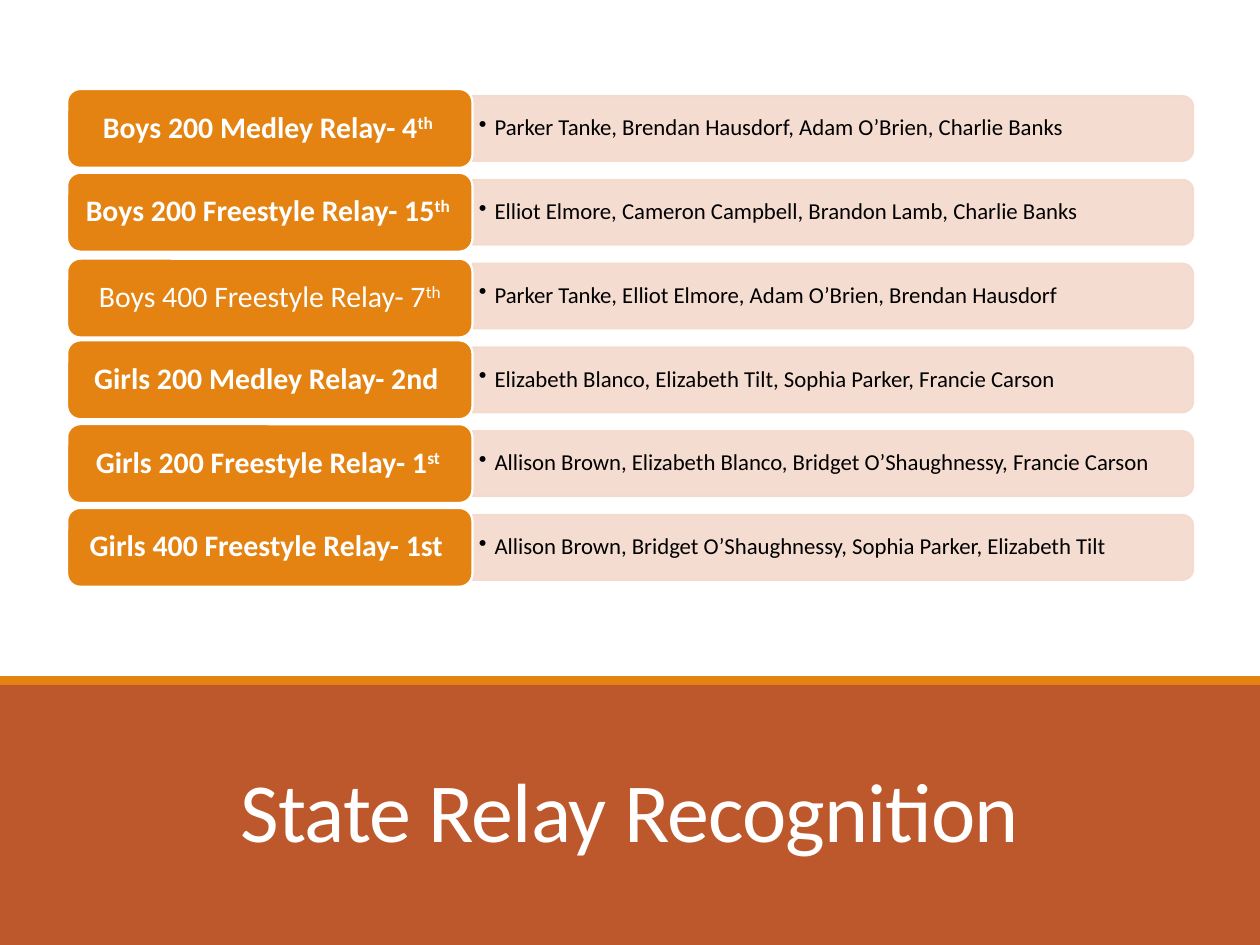
from dataclasses import dataclass

from lxml.etree import SubElement
from pptx import Presentation
from pptx.dml.color import RGBColor
from pptx.enum.shapes import MSO_SHAPE
from pptx.enum.text import MSO_ANCHOR, PP_ALIGN
from pptx.oxml.ns import qn
from pptx.util import Pt


@dataclass(frozen=True)
class Theme:
    font: str = "Calibri"
    white: str = "FFFFFF"
    black: str = "000000"
    rust: str = "BD582C"
    orange: str = "E48312"
    blush: str = "F5D9CC"
    title_size: float = 48
    label_size: float = 17
    names_size: float = 13
    outline: float = 1.25


class SlideBuilder:
    def __init__(self, slide, theme):
        self.s = slide
        self.theme = theme

    def box(self, kind, x, y, w, h, fill, line=None):
        sp = self.s.shapes.add_shape(kind, Pt(x), Pt(y), Pt(w), Pt(h))
        sp.shadow.inherit = False
        sp.fill.solid()
        sp.fill.fore_color.rgb = RGBColor.from_string(fill)
        if line:
            sp.line.color.rgb = RGBColor.from_string(line)
            sp.line.width = Pt(self.theme.outline)
        else:
            sp.line.fill.background()
        return sp

    def frame(self, sp, mx, my, anchor=MSO_ANCHOR.MIDDLE):
        tf = sp.text_frame
        tf.word_wrap = True
        tf.vertical_anchor = anchor
        tf.margin_left = tf.margin_right = Pt(mx)
        tf.margin_top = tf.margin_bottom = Pt(my)
        return tf

    def style(self, r, size, color, bold=False):
        r.font.name = self.theme.font
        r.font.size = Pt(size)
        r.font.bold = bold
        r.font.color.rgb = RGBColor.from_string(color)

    def title(self, text, x, y, w, h):
        sp = self.s.shapes.add_textbox(Pt(x), Pt(y), Pt(w), Pt(h))
        p = self.frame(sp, 7.2, 3.6, MSO_ANCHOR.BOTTOM).paragraphs[0]
        p.text = text
        p.alignment = PP_ALIGN.CENTER
        p.line_spacing = 0.85
        r = p.runs[0]
        self.style(r, self.theme.title_size, self.theme.white)
        r.font._element.set("spc", "-50")

    def bar(self, x, center_y, w, h):
        color = self.theme.blush
        sp = self.box(MSO_SHAPE.ROUND_2_SAME_RECTANGLE, x + (w - h) / 2,
                      center_y - w / 2, h, w, color, color)
        sp.rotation = 90
        for clr in sp._element.spPr.iter(qn("a:srgbClr")):
            SubElement(clr, qn("a:alpha"), val="90000")

    def names(self, text, x, center_y, w, h):
        sp = self.s.shapes.add_textbox(Pt(x), Pt(center_y - h / 2), Pt(w), Pt(h))
        p = self.frame(sp, 3.6, 1.8).paragraphs[0]
        p.text = text
        p.line_spacing = 0.9
        pPr = p._p.get_or_add_pPr()
        pPr.set("marL", str(Pt(9)))
        pPr.set("indent", str(-Pt(9)))
        SubElement(pPr, qn("a:buChar"), char="•")
        self.style(p.runs[0], self.theme.names_size, self.theme.black)

    def label(self, text, suffix, bold, x, center_y, w, h):
        sp = self.box(MSO_SHAPE.ROUNDED_RECTANGLE, x, center_y - h / 2, w, h,
                      self.theme.orange, self.theme.white)
        p = self.frame(sp, 7.2, 5).paragraphs[0]
        p.text = text
        p.alignment = PP_ALIGN.CENTER
        p.line_spacing = 0.9
        if suffix:
            r = p.add_run()
            r.text = suffix
            r.font._element.set("baseline", "30000")
        for r in p.runs:
            self.style(r, self.theme.label_size, self.theme.white, bold)


RELAYS = [
    ("Boys 200 Medley Relay- 4", "th ", True, 0,
     "Parker Tanke, Brendan Hausdorf, Adam O’Brien, Charlie Banks"),
    ("Boys 200 Freestyle Relay- 15", "th ", True, 0,
     "Elliot Elmore, Cameron Campbell, Brandon Lamb, Charlie Banks"),
    ("Boys 400 Freestyle Relay- 7", "th", False, 1.2,
     "Parker Tanke, Elliot Elmore, Adam O’Brien, Brendan Hausdorf"),
    ("Girls 200 Medley Relay- 2nd ", "", True, 0,
     "Elizabeth Blanco, Elizabeth Tilt, Sophia Parker, Francie Carson"),
    ("Girls 200 Freestyle Relay- 1", "st ", True, 0,
     "Allison Brown, Elizabeth Blanco, Bridget O’Shaughnessy, Francie Carson"),
    ("Girls 400 Freestyle Relay- 1st ", "", True, 0,
     "Allison Brown, Bridget O’Shaughnessy, Sophia Parker, Elizabeth Tilt"),
]
FIRST_CENTER, PITCH = 73.4, 47.88
LABEL_X, LABEL_W, LABEL_H = 38.4, 231.6, 45
BAR_X, BAR_W, BAR_H = LABEL_X + LABEL_W, 411.8, 37


def main():
    prs = Presentation()
    prs.slide_width, prs.slide_height = Pt(720), Pt(540)
    theme = Theme()
    slide = SlideBuilder(prs.slides.add_slide(prs.slide_layouts[6]), theme)

    slide.box(MSO_SHAPE.RECTANGLE, 0, 0, 720, 540, theme.white)
    slide.box(MSO_SHAPE.RECTANGLE, 0, 390, 720, 150, theme.rust)
    slide.title("State Relay Recognition", 63, 413.3, 594, 81.4)
    slide.box(MSO_SHAPE.RECTANGLE, 0, 386.4, 720, 5, theme.orange)

    for i, (event, suffix, bold, nudge, swimmers) in enumerate(RELAYS):
        center = FIRST_CENTER + i * PITCH
        slide.bar(BAR_X, center, BAR_W, BAR_H)
        slide.names(swimmers, BAR_X, center, 410.4, 33)
        slide.label(event, suffix, bold, LABEL_X, center + nudge, LABEL_W, LABEL_H)

    prs.save("out.pptx")


if __name__ == "__main__":
    main()
